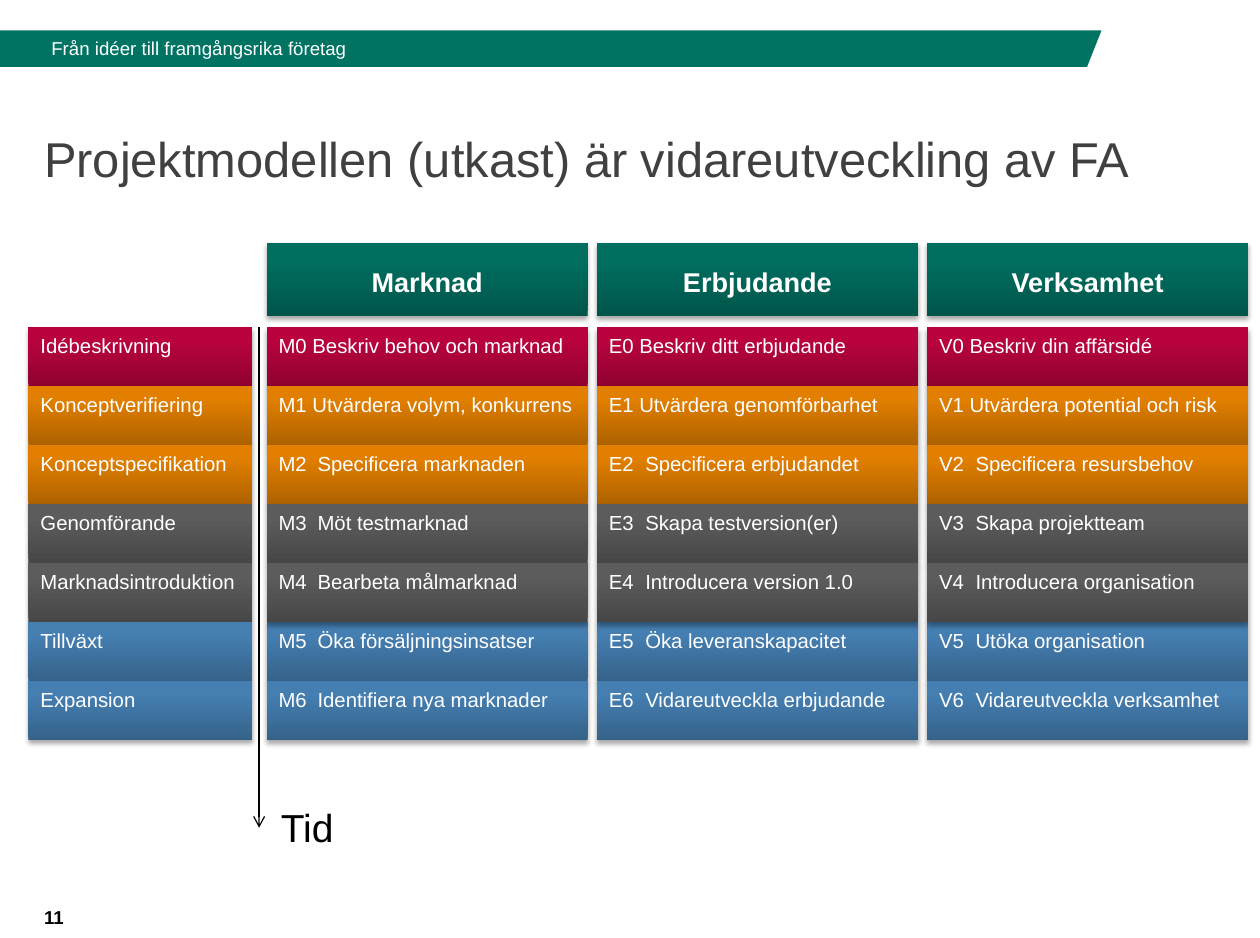
from dataclasses import dataclass

from lxml.etree import SubElement
from pptx import Presentation
from pptx.dml.color import RGBColor
from pptx.enum.shapes import MSO_CONNECTOR, MSO_SHAPE
from pptx.enum.text import MSO_ANCHOR, MSO_AUTO_SIZE, PP_ALIGN
from pptx.oxml.ns import qn
from pptx.util import Pt


@dataclass(frozen=True)
class Theme:
    font: str = "Arial"
    band: str = "007363"
    title: str = "404040"
    dark: str = "000000"
    light: str = "FFFFFF"
    # Gradients run from the bottom colour to the top colour.
    green: tuple = ("00564A", "006F60")
    red: tuple = ("8F0230", "BA033E")
    orange: tuple = ("AE6200", "E27F00")
    grey: tuple = ("474747", "5C5C5C")
    blue: tuple = ("356289", "457FB2")
    title_size: float = 28.8
    time_size: float = 23
    header_size: float = 16
    cell_size: float = 12
    small_size: float = 11


THEME = Theme()

STAGES = [
    ("Idébeskrivning", THEME.red),
    ("Konceptverifiering", THEME.orange),
    ("Konceptspecifikation", THEME.orange),
    ("Genomförande", THEME.grey),
    ("Marknadsintroduktion", THEME.grey),
    ("Tillväxt", THEME.blue),
    ("Expansion", THEME.blue),
]
# Heading, distance from code to step name, steps
TRACKS = [
    ("Marknad", 23, [
        "M0 Beskriv behov och marknad", "M1 Utvärdera volym, konkurrens",
        "M2\tSpecificera marknaden", "M3\tMöt testmarknad",
        "M4\tBearbeta målmarknad", "M5\tÖka försäljningsinsatser",
        "M6\tIdentifiera nya marknader"]),
    ("Erbjudande", 21.5, [
        "E0 Beskriv ditt erbjudande", "E1 Utvärdera genomförbarhet",
        "E2\tSpecificera erbjudandet", "E3\tSkapa testversion(er)",
        "E4\tIntroducera version 1.0", "E5\tÖka leveranskapacitet",
        "E6\tVidareutveckla erbjudande"]),
    ("Verksamhet", 21.5, [
        "V0 Beskriv din affärsidé", "V1 Utvärdera potential och risk",
        "V2\tSpecificera resursbehov", "V3\tSkapa projektteam",
        "V4\tIntroducera organisation", "V5\tUtöka organisation",
        "V6\tVidareutveckla verksamhet"]),
]
# The first blue step lies beneath the shadow of the grey one above it.
TRACK_ORDER = (0, 1, 2, 5, 3, 4, 6)

STAGE_LEFT, STAGE_WIDTH = 16.8, 131.8
TRACK_LEFT, TRACK_PITCH, TRACK_WIDTH = 157.2, 194.75, 189.4
HEADER_TOP, HEADER_HEIGHT = 143.2, 43.2
ROWS_TOP, ROW_PITCH = 193, 34.8


def apply_format(target, formats):
    for name, value in formats.items():
        setattr(target, name, value)


def write(frame, text, size, color, bold=False, tab=None, **paragraph_format):
    paragraph = frame.paragraphs[0]
    paragraph.text = text
    apply_format(paragraph, paragraph_format)
    if tab:
        tabs = SubElement(paragraph._p.get_or_add_pPr(), qn("a:tabLst"))
        SubElement(tabs, qn("a:tab"), pos=str(Pt(tab)), algn="l")
    apply_format(paragraph.font,
                 {"name": THEME.font, "size": Pt(size), "bold": bold})
    paragraph.font.color.rgb = RGBColor.from_string(color)


def add_soft_shadow(shape):
    shape.shadow.inherit = False
    effects = shape._element.spPr.find(qn("a:effectLst"))
    shadow = SubElement(effects, qn("a:outerShdw"), blurRad=str(Pt(3.1)),
                        dist=str(Pt(1.8)), dir="5400000", rotWithShape="0")
    black = SubElement(shadow, qn("a:srgbClr"), val=THEME.dark)
    SubElement(black, qn("a:alpha"), val="35000")


def add_block(slide, box, gradient, text, size=THEME.cell_size, **text_format):
    block = slide.shapes.add_shape(MSO_SHAPE.RECTANGLE, *map(Pt, box))
    block.fill.gradient()
    block.fill.gradient_angle = 90
    for stop, position, color in zip(block.fill.gradient_stops, (0, 0.8), gradient):
        stop.position = position
        stop.color.rgb = RGBColor.from_string(color)
    block.line.fill.background()
    add_soft_shadow(block)
    apply_format(block.text_frame,
                 {"word_wrap": True, "vertical_anchor": MSO_ANCHOR.TOP})
    write(block.text_frame, text, size, THEME.light,
          **{"alignment": PP_ALIGN.LEFT, **text_format})


def add_label(slide, box, text, size, color, bold=False, **frame_format):
    label = slide.shapes.add_textbox(*map(Pt, box))
    apply_format(label.text_frame, {"word_wrap": True, **frame_format})
    write(label.text_frame, text, size, color, bold)


def add_band(slide):
    top, bottom = Pt(18), Pt(39.5)
    outline = slide.shapes.build_freeform(0, top)
    outline.add_line_segments(
        [(0, bottom), (Pt(641), bottom), (Pt(649.5), top)], close=True)
    band = outline.convert_to_shape()
    band.fill.solid()
    band.fill.fore_color.rgb = RGBColor.from_string(THEME.band)
    band.line.fill.background()
    band.shadow.inherit = False


def set_title(slide, text):
    title = slide.shapes.title
    apply_format(title, {"left": Pt(26), "top": Pt(67),
                         "width": Pt(686), "height": Pt(52)})
    apply_format(title.text_frame, {
        "margin_left": 0, "word_wrap": True, "auto_size": MSO_AUTO_SIZE.NONE,
        "vertical_anchor": MSO_ANCHOR.MIDDLE})
    write(title.text_frame, text, THEME.title_size, THEME.title,
          alignment=PP_ALIGN.LEFT)


def add_track(slide, left, heading, tab, steps):
    add_block(slide, (left, HEADER_TOP, TRACK_WIDTH, HEADER_HEIGHT), THEME.green,
              heading, THEME.header_size, bold=True,
              alignment=PP_ALIGN.CENTER, line_spacing=1.5)
    for row in TRACK_ORDER:
        top = ROWS_TOP + row * ROW_PITCH
        add_block(slide, (left, top, TRACK_WIDTH, ROW_PITCH),
                  STAGES[row][1], steps[row], tab=tab)


def add_time_arrow(slide, x, top, bottom):
    arrow = slide.shapes.add_connector(
        MSO_CONNECTOR.STRAIGHT, Pt(x), Pt(top), Pt(x), Pt(bottom))
    arrow.line.width = Pt(0.75)
    arrow.line.color.rgb = RGBColor.from_string(THEME.dark)
    SubElement(arrow.line._get_or_add_ln(), qn("a:tailEnd"), type="arrow")
    SubElement(arrow._element.spPr, qn("a:effectLst"))


def main():
    deck = Presentation()
    apply_format(deck, {"slide_width": Pt(743), "slide_height": Pt(553)})
    slide = deck.slides.add_slide(deck.slide_layouts.get_by_name("Title Only"))

    add_band(slide)
    add_label(slide, (23.2, 18, 235.5, 21), "Från idéer till framgångsrika företag",
              THEME.small_size, THEME.light)
    set_title(slide, "Projektmodellen (utkast) är vidareutveckling av FA")

    for column, track in enumerate(TRACKS):
        add_track(slide, TRACK_LEFT + column * TRACK_PITCH, *track)
    for row, (stage, gradient) in enumerate(STAGES):
        top = ROWS_TOP + row * ROW_PITCH
        add_block(slide, (STAGE_LEFT, top, STAGE_WIDTH, ROW_PITCH), gradient, stage)

    add_time_arrow(slide, 152.8, ROWS_TOP, 488)
    add_label(slide, (158.5, 470, 46, 35), "Tid", THEME.time_size, THEME.dark,
              word_wrap=False)
    add_label(slide, (19.5, 535, 173.5, 15.8), "11", THEME.small_size, THEME.dark,
              bold=True, vertical_anchor=MSO_ANCHOR.BOTTOM,
              margin_left=Pt(6.5), margin_right=Pt(6.5))
    deck.save("out.pptx")


if __name__ == "__main__":
    main()
